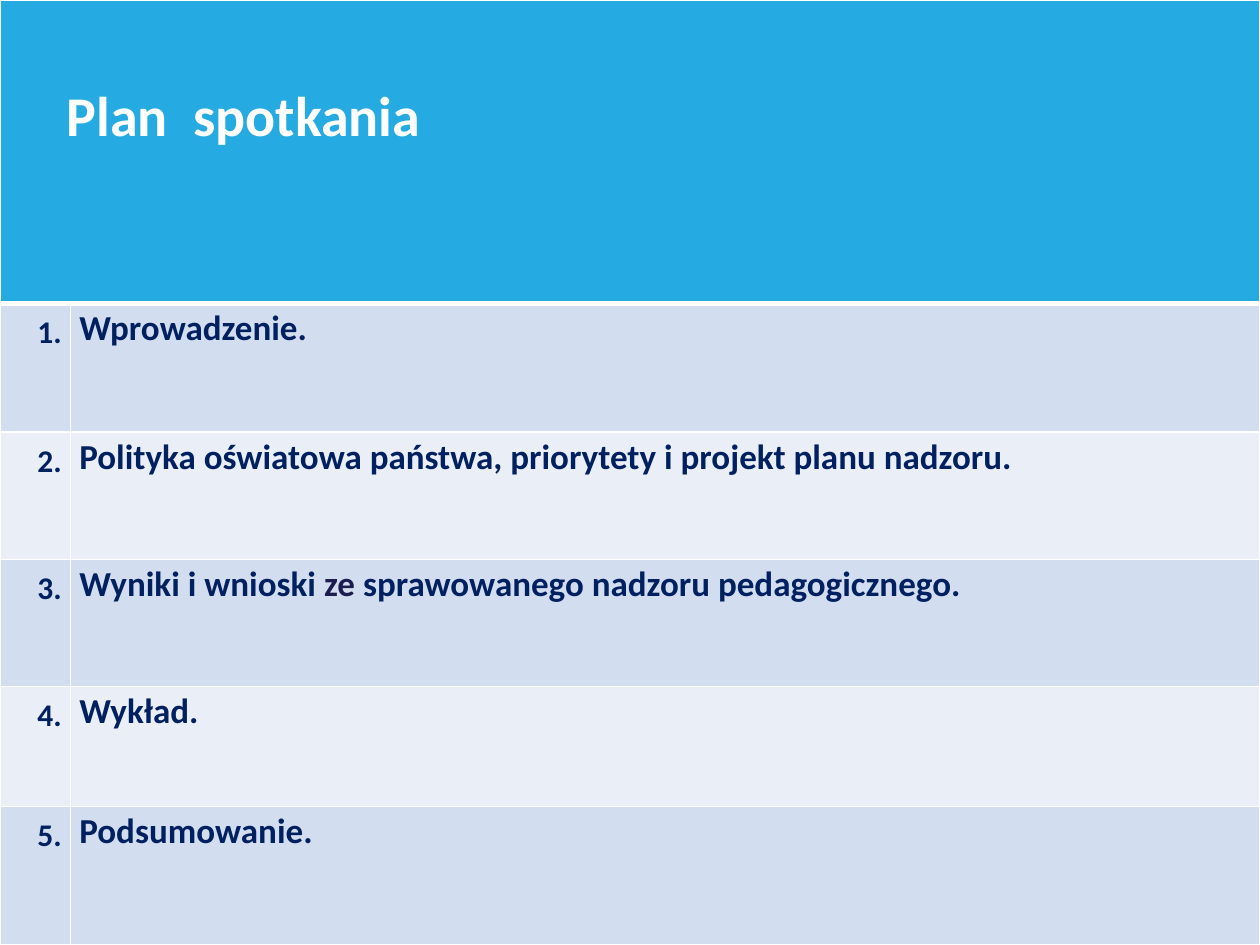
from lxml import etree
from pptx import Presentation
from pptx.dml.color import RGBColor
from pptx.enum.text import PP_ALIGN
from pptx.oxml.ns import qn
from pptx.util import Inches, Pt

RIGHT = PP_ALIGN.RIGHT
WHITE, NAVY, BLUE = "FFFFFF", "002060", "25AAE1"
BANDS = ["D2DEEF", "EAEFF7"]


def rgb(value):
    return RGBColor.from_string(value)


def format_cell(cell, runs, size, fill, margins, borders):
    tc_pr = cell._tc.get_or_add_tcPr()
    for side, width in zip(("L", "R", "T", "B"), borders):
        ln = etree.SubElement(tc_pr, qn("a:ln" + side), w=str(Pt(width)))
        solid = etree.SubElement(ln, qn("a:solidFill"))
        etree.SubElement(solid, qn("a:srgbClr"), val=WHITE)
    cell.fill.solid()
    cell.fill.fore_color.rgb = rgb(fill)
    cell.margin_left, cell.margin_top = [Inches(m) for m in margins]
    cell.margin_right, cell.margin_bottom = Inches(0.07), Inches(0.03)
    p = cell.text_frame.paragraphs[0]
    for text, color in runs:
        r = p.add_run()
        r.text = text
        r.font.name = "Calibri"
        r.font.size = Pt(size)
        r.font.bold = True
        r.font.color.rgb = rgb(color)
    return p


agenda = [
    [("Wprowadzenie.", NAVY)],
    [("Polityka oświatowa państwa, priorytety i projekt planu nadzoru.", NAVY)],
    [("Wyniki i wnioski ", NAVY), ("ze ", "1C1C4E"),
     ("sprawowanego nadzoru pedagogicznego.", NAVY)],
    [("Wykład.", NAVY)],
    [("Podsumowanie.", NAVY)],
]
col_widths = [0.56, 9.44]
row_heights = [2.41, 1.02, 1.01, 1.01, 0.95, 1.1]

prs = Presentation()
prs.slide_width, prs.slide_height = Inches(10), Inches(7.5)
s = prs.slides.add_slide(prs.slide_layouts[6])

table = s.shapes.add_table(len(row_heights), len(col_widths), 0, 0,
                           Inches(10), Inches(7.5)).table
for column, width in zip(table.columns, col_widths):
    column.width = Inches(width)
for row, height in zip(table.rows, row_heights):
    row.height = Inches(height)

table.cell(0, 0).merge(table.cell(0, 1))
title = [("Plan  spotkania", WHITE)]
for col, runs in enumerate([title, []]):
    format_cell(table.cell(0, col), runs, 32, BLUE, (0.53, 0.66), (1, 1, 1, 3))

for i, runs in enumerate(agenda, start=1):
    fill = BANDS[(i - 1) % 2]
    borders = (1, 1, 3 if i == 1 else 1, 1)
    p = format_cell(table.cell(i, 0), [(f"{i}.", NAVY)], 18, fill, (0.07, 0.1), borders)
    p.alignment = RIGHT
    p.line_spacing = 0.9
    format_cell(table.cell(i, 1), runs, 20, fill, (0.07, 0.03), borders)

prs.save("out.pptx")
